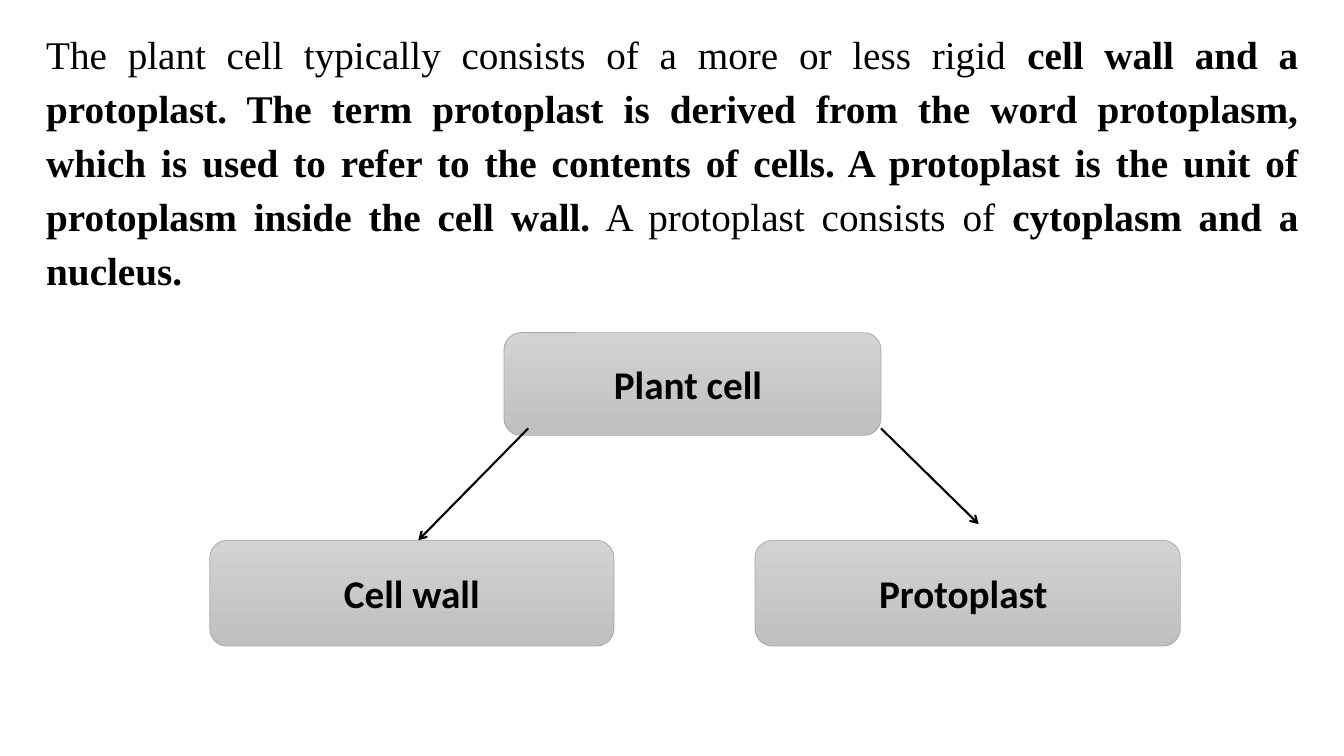
from lxml import etree
from pptx import Presentation
from pptx.dml.color import RGBColor
from pptx.enum.shapes import MSO_CONNECTOR, MSO_SHAPE
from pptx.enum.text import MSO_ANCHOR, MSO_AUTO_SIZE, PP_ALIGN
from pptx.oxml.ns import qn
from pptx.util import Pt

STRAIGHT = MSO_CONNECTOR.STRAIGHT
ROUND = MSO_SHAPE.ROUNDED_RECTANGLE
MIDDLE = MSO_ANCHOR.MIDDLE
GROW = MSO_AUTO_SIZE.SHAPE_TO_FIT_TEXT
CENTER, JUSTIFY = PP_ALIGN.CENTER, PP_ALIGN.JUSTIFY

COLORS = {"ink": "000000", "top": "D2D2D2", "base": "C0C0C0", "edge": "A5A5A5"}

INTRO = [
    ("The plant cell typically consists of a more or less rigid ", False),
    ("cell wall and a protoplast. The term protoplast is derived from the word "
     "protoplasm, which is used to refer to the contents of cells. A protoplast "
     "is the unit of protoplasm inside the cell wall.", True),
    (" A protoplast consists of ", False),
    ("cytoplasm and a nucleus. ", True),
]
BOXES = [
    ("Plant cell ", 360, 237.6, 269.3, 73.4),
    ("Protoplast ", 539.3, 385.9, 303.8, 75.6),
    ("Cell wall", 149.8, 385.9, 288.7, 75.6),
]
ARROWS = [(377.3, 306, 298.8, 385.9), (629.3, 306, 699.1, 374.4)]


def color(name):
    return RGBColor.from_string(COLORS[name])


def style(run, face, bold):
    font = run.font
    font.name, font.size, font.bold = face, Pt(28), bold
    font.color.rgb = color("ink")


def add_intro(slide, parts, *place):
    box = slide.shapes.add_textbox(*map(Pt, place))
    frame = box.text_frame
    frame.word_wrap = True
    frame.auto_size = GROW
    para = frame.paragraphs[0]
    para.alignment = JUSTIFY
    para.line_spacing = 1.15
    para.space_after = Pt(10)
    for text, bold in parts:
        run = para.add_run()
        run.text = text
        style(run, "Times New Roman", bold)


def add_box(slide, text, *place):
    box = slide.shapes.add_shape(ROUND, *map(Pt, place))
    box.shadow.inherit = False
    box.fill.gradient()
    box.fill.gradient_angle = 270
    for stop, name in zip(box.fill.gradient_stops, ("top", "base")):
        stop.color.rgb = color(name)
    box.line.color.rgb = color("edge")
    box.line.width = Pt(0.5)
    frame = box.text_frame
    frame.vertical_anchor = MIDDLE
    frame.text = text
    para = frame.paragraphs[0]
    para.alignment = CENTER
    style(para.runs[0], "Calibri", True)


def add_arrow(slide, *ends):
    arrow = slide.shapes.add_connector(STRAIGHT, *map(Pt, ends))
    arrow.line.color.rgb = color("ink")
    arrow.line.width = Pt(1.5)
    props = arrow.element.spPr
    etree.SubElement(props.find(qn("a:ln")), qn("a:tailEnd"), type="arrow")
    etree.SubElement(props, qn("a:effectLst"))


def main():
    deck = Presentation()
    deck.slide_width, deck.slide_height = Pt(960), Pt(540)
    slide = deck.slides.add_slide(deck.slide_layouts[6])
    for box in BOXES:
        add_box(slide, *box)
    for ends in ARROWS:
        add_arrow(slide, *ends)
    add_intro(slide, INTRO, 25.9, 13, 908.6, 200.2)
    deck.save("out.pptx")


if __name__ == "__main__":
    main()
